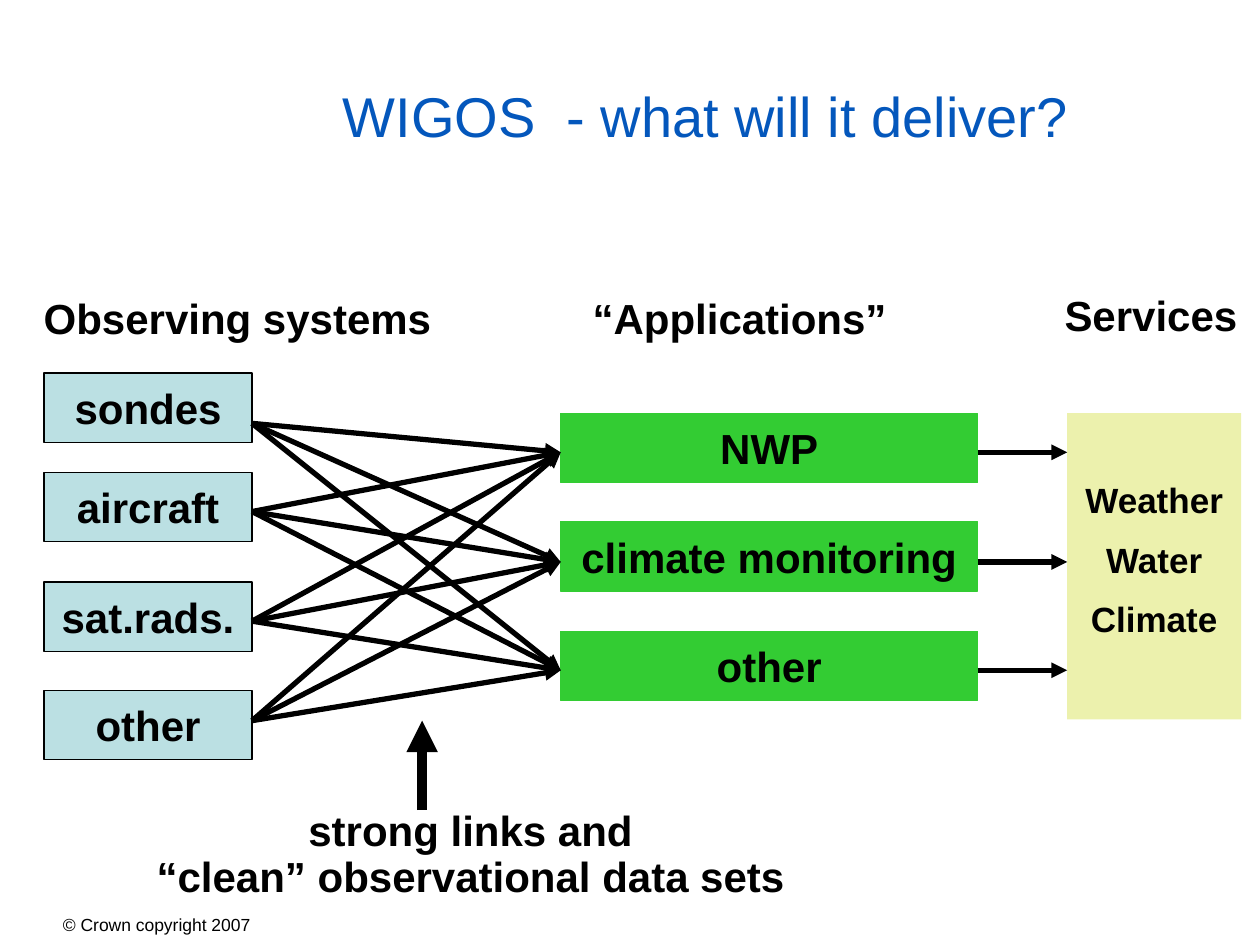
from itertools import product

from lxml.etree import SubElement
from pptx import Presentation
from pptx.dml.color import RGBColor
from pptx.enum.shapes import MSO_CONNECTOR, MSO_SHAPE
from pptx.enum.text import MSO_ANCHOR, PP_ALIGN
from pptx.oxml.ns import qn
from pptx.util import Inches, Pt

COLORS = {
    "text": "000000",
    "title": "0457BC",
    "system": "BBE0E3",
    "application": "33CC33",
    "service": "ECF1AD",
}
SYSTEMS = [
    ("sondes", 2.96, 3.36),
    ("aircraft", 3.75, 4.06),
    ("sat.rads.", 4.62, 4.93),
    ("other", 5.48, 5.72),
]
APPLICATIONS = [
    ("NWP", 3.28, 3.59),
    ("climate monitoring", 4.14, 4.46),
    ("other", 5.01, 5.32),
]
HEADINGS = [
    ("Observing systems", 0.3, 3.17),
    ("“Applications”", 4.61, 2.52),
]
BOX_HEIGHT = 0.55
SYSTEM_LEFT, SYSTEM_WIDTH = 0.35, 1.65
APPLICATION_LEFT, APPLICATION_WIDTH = 4.45, 3.31
SERVICE_LEFT = 8.47


def rgb(name):
    """Return the named colour."""
    return RGBColor.from_string(COLORS[name])


def write(shape, text, size=24, bold=True, color="text", align=PP_ALIGN.CENTER,
          anchor=MSO_ANCHOR.MIDDLE, wrap=False, line_spacing=None, gap=None):
    """Fill a shape with evenly formatted paragraphs."""
    frame = shape.text_frame
    frame.text = text
    frame.word_wrap = wrap
    frame.vertical_anchor = anchor
    for index, paragraph in enumerate(frame.paragraphs):
        paragraph.alignment = align
        if line_spacing:
            paragraph.line_spacing = line_spacing
        if gap and index:
            paragraph.space_before = gap
        for run in paragraph.runs:
            run.font.name = "Arial"
            run.font.size = Pt(size)
            run.font.bold = bold
            run.font.color.rgb = rgb(color)


def add_label(slide, text, left, top, width, height, inset=True, **style):
    """Add a text box, optionally without insets."""
    label = slide.shapes.add_textbox(Inches(left), Inches(top), Inches(width), Inches(height))
    if not inset:
        frame = label.text_frame
        frame.margin_left = frame.margin_right = frame.margin_top = frame.margin_bottom = 0
    write(label, text, **style)


def add_box(slide, text, left, top, width, height, fill, line=None, **style):
    """Add a filled rectangle with centred text."""
    box = slide.shapes.add_shape(
        MSO_SHAPE.RECTANGLE, Inches(left), Inches(top), Inches(width), Inches(height))
    box.shadow.inherit = False
    box.fill.solid()
    box.fill.fore_color.rgb = rgb(fill)
    if line:
        box.line.color.rgb = rgb(line)
        box.line.width = Pt(0.75)
    else:
        box.line.fill.background()
    write(box, text, **style)
    return box


def add_arrow(slide, start, end, width=3):
    """Add a straight black arrow between two points."""
    arrow = slide.shapes.add_connector(
        MSO_CONNECTOR.STRAIGHT, *(Inches(value) for value in (*start, *end)))
    arrow.line.color.rgb = rgb("text")
    arrow.line.width = Pt(width)
    properties = arrow._element.spPr
    SubElement(properties.find(qn("a:ln")), qn("a:tailEnd"), type="triangle")
    SubElement(properties, qn("a:effectLst"))


def main():
    """Build the slide and save it."""
    deck = Presentation()
    deck.slide_width, deck.slide_height = Inches(10), Inches(7.5)
    slide = deck.slides.add_slide(deck.slide_layouts[6])
    top_left = {"align": PP_ALIGN.LEFT, "anchor": MSO_ANCHOR.TOP, "wrap": True}

    add_label(slide, "© Crown copyright 2007", 0.5, 7.25, 3.17, 0.25,
              inset=False, size=10, bold=False, **top_left)
    add_label(slide, "WIGOS  - what will it deliver?", 2.72, 0.68, 6.61, 0.79,
              inset=False, size=32, bold=False, color="title",
              line_spacing=Pt(36), **top_left)

    for heading, left, width in HEADINGS:
        add_label(slide, heading, left, 2.25, width, BOX_HEIGHT, inset=False)
    add_label(slide, "Services", 8.35, 2.25, 1.65, 0.5, **top_left)

    for name, top, _ in SYSTEMS:
        add_box(slide, name, SYSTEM_LEFT, top, SYSTEM_WIDTH, BOX_HEIGHT, "system", "text")
    for name, top, _ in APPLICATIONS:
        add_box(slide, name, APPLICATION_LEFT, top, APPLICATION_WIDTH, BOX_HEIGHT,
                "application", "application")
    services = add_box(slide, "Weather\nWater\nClimate", SERVICE_LEFT, 3.28, 1.38, 2.43,
                       "service", size=20, anchor=MSO_ANCHOR.TOP, wrap=True, gap=Pt(10))
    services.text_frame.margin_top = Inches(0.52)

    for (_, _, system_y), (_, _, application_y) in product(SYSTEMS, APPLICATIONS):
        add_arrow(slide, (SYSTEM_LEFT + SYSTEM_WIDTH, system_y),
                  (APPLICATION_LEFT, application_y))
    for _, _, y in APPLICATIONS:
        add_arrow(slide, (APPLICATION_LEFT + APPLICATION_WIDTH, y), (SERVICE_LEFT, y))

    add_label(slide, "strong links and\n“clean” observational data sets", 0.9, 6.51, 5.67, 0.7,
              anchor=MSO_ANCHOR.TOP, wrap=True, line_spacing=0.5, gap=Pt(12))
    add_arrow(slide, (3.35, 6.43), (3.35, 5.72), width=6)

    deck.save("out.pptx")


if __name__ == "__main__":
    main()
